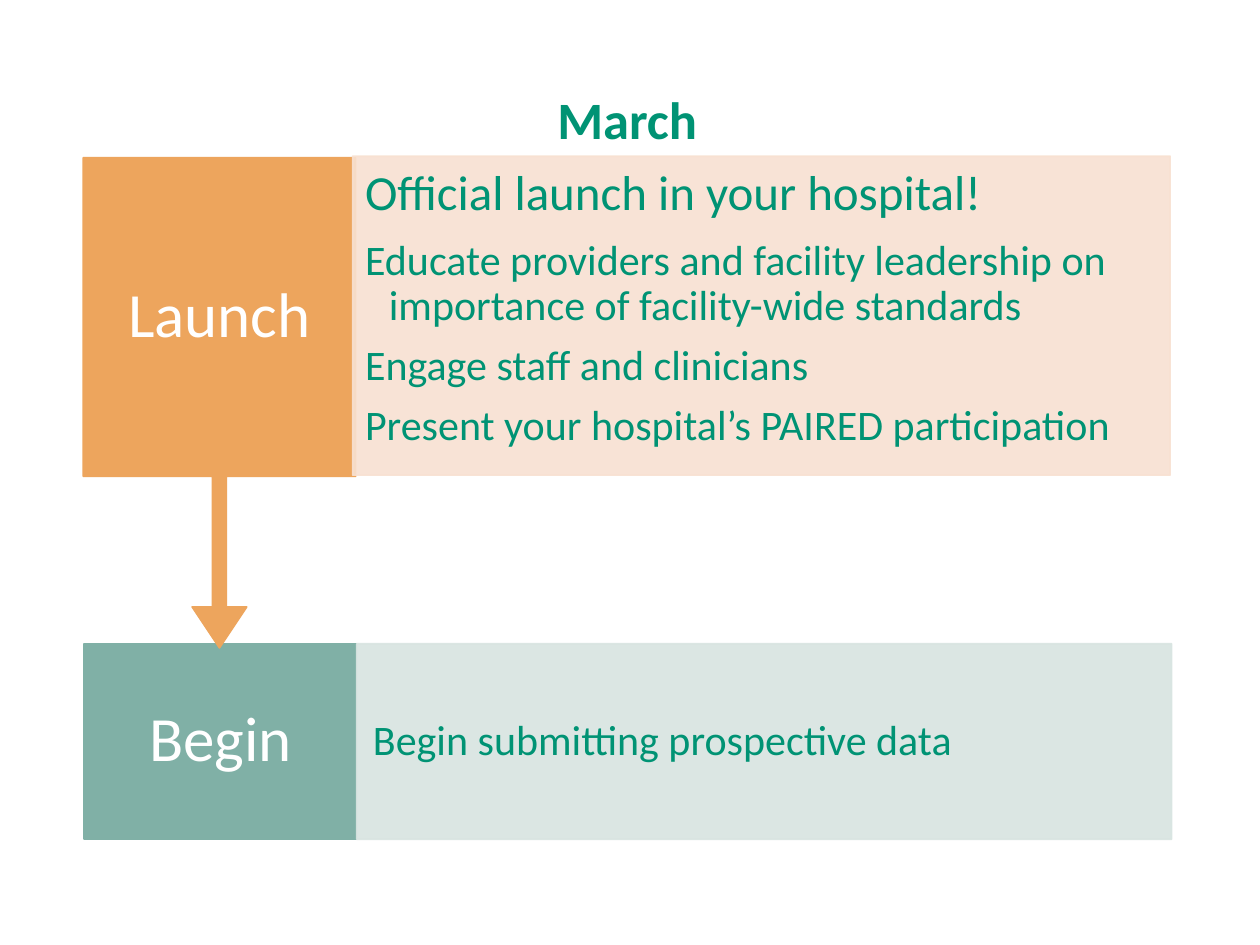
from dataclasses import dataclass

from pptx import Presentation
from pptx.dml.color import RGBColor
from pptx.enum.shapes import MSO_SHAPE
from pptx.enum.text import MSO_ANCHOR, PP_ALIGN
from pptx.oxml.ns import qn
from pptx.util import Cm, Pt
from lxml.etree import SubElement

COLORS = {
    "green": "009374", "white": "FFFFFF",
    "orange": "EDA55D", "peach": "F8E1D2",
    "teal": "80B0A6", "mist": "D8E4E1",
}


@dataclass
class Line:
    text: str
    size: int = 24
    hang: float = 0


@dataclass
class Box:
    at: tuple[float, float, float, float]
    fill: str
    lines: list[Line]
    insets: tuple[float, float, float, float]
    kind: MSO_SHAPE = MSO_SHAPE.RECTANGLE
    adjustments: tuple[float, ...] = ()
    alpha: int = 100
    color: str = "green"
    align: PP_ALIGN = PP_ALIGN.LEFT
    anchor: MSO_ANCHOR = MSO_ANCHOR.MIDDLE


def rgb(name: str) -> RGBColor:
    return RGBColor.from_string(COLORS[name])


def set_text(sp, lines: list[Line], *, color="green", bold=False, align=PP_ALIGN.LEFT,
             anchor=MSO_ANCHOR.MIDDLE, insets=(0.25, 0.13, 0.25, 0.13)) -> None:
    tf = sp.text_frame
    tf.word_wrap = True
    tf.vertical_anchor = anchor
    tf.margin_left, tf.margin_top, tf.margin_right, tf.margin_bottom = map(Cm, insets)
    for i, line in enumerate(lines):
        p = tf.add_paragraph() if i else tf.paragraphs[0]
        p.alignment = align
        p.line_spacing = 0.9
        p.space_after = Pt(round(0.35 * line.size, 1)) if len(lines) > 1 else Pt(0)
        if line.hang:
            pPr = p._p.get_or_add_pPr()
            pPr.set("marL", str(Cm(line.hang)))
            pPr.set("indent", str(-Cm(line.hang)))
        r = p.add_run()
        r.text = line.text
        r.font.name = "Calibri"
        r.font.size = Pt(line.size)
        r.font.bold = bold
        r.font.color.rgb = rgb(color)


def add_box(s, box: Box) -> None:
    sp = s.shapes.add_shape(box.kind, *map(Cm, box.at))
    sp.shadow.inherit = False
    for i, value in enumerate(box.adjustments):
        sp.adjustments[i] = value
    sp.fill.solid()
    sp.fill.fore_color.rgb = rgb(box.fill)
    sp.line.color.rgb = rgb(box.fill)
    sp.line.width = Pt(1)
    if box.alpha < 100:
        for clr in sp._element.spPr.iter(qn("a:srgbClr")):
            SubElement(clr, qn("a:alpha")).set("val", str(box.alpha * 1000))
    set_text(sp, box.lines, color=box.color, align=box.align,
             anchor=box.anchor, insets=box.insets)


LABEL = dict(insets=(0.38, 0.71, 0.38, 0.71), color="white", align=PP_ALIGN.CENTER)
BOXES = [
    Box((1.7, 12.98, 5.49, 3.94), "teal", [Line("Begin", 36)], **LABEL),
    Box((7.19, 12.98, 16.43, 3.94), "mist", [Line("Begin submitting prospective data")],
        insets=(0.33, 0.84, 0.33, 0.84), alpha=90),
    Box((1.68, 3.18, 5.49, 9.88), "orange", [Line("Launch", 36)],
        kind=MSO_SHAPE.DOWN_ARROW_CALLOUT, adjustments=(0.05, 0.1, 0.15, 0.65), **LABEL),
    Box((7.11, 3.15, 16.48, 6.43), "peach", [
        Line("Official launch in your hospital!", 28),
        Line("Educate providers and facility leadership on importance of "
             "facility-wide standards", hang=0.48),
        Line("Engage staff and clinicians", hang=0.48),
        Line("Present your hospital’s PAIRED participation", hang=0.48),
    ], insets=(0.25, 0.25, 0.25, 0), alpha=90, anchor=MSO_ANCHOR.TOP),
]


def main() -> None:
    """Build the March launch slide and save it."""
    prs = Presentation()
    prs.slide_width, prs.slide_height = Cm(25.4), Cm(19.05)
    s = prs.slides.add_slide(prs.slide_layouts[6])
    title = s.shapes.add_textbox(Cm(1.7), Cm(0.41), Cm(21.89), Cm(2.77))
    set_text(title, [Line("March", 30)], bold=True, align=PP_ALIGN.CENTER,
             anchor=MSO_ANCHOR.BOTTOM)
    for box in BOXES:
        add_box(s, box)
    prs.save("out.pptx")


if __name__ == "__main__":
    main()
